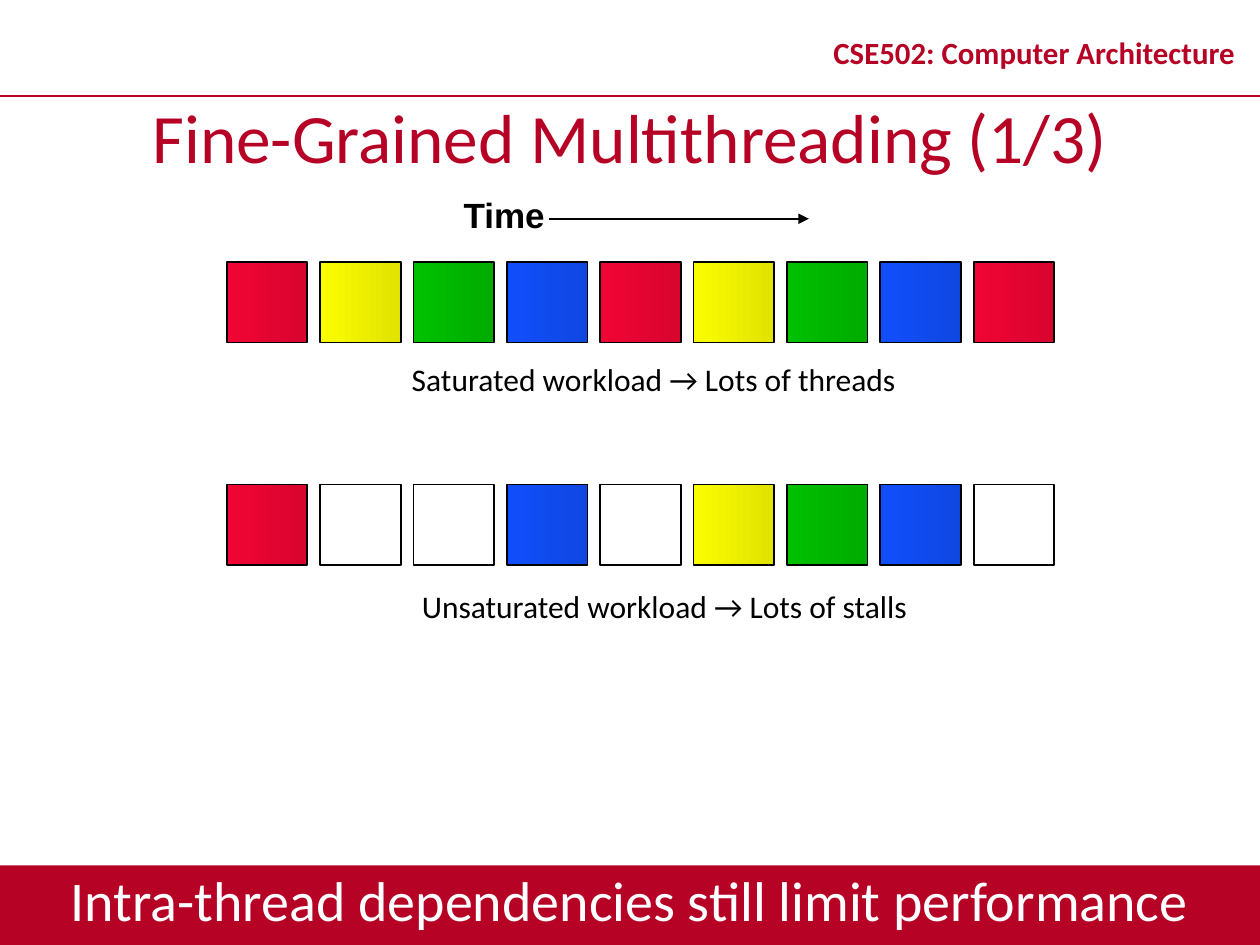
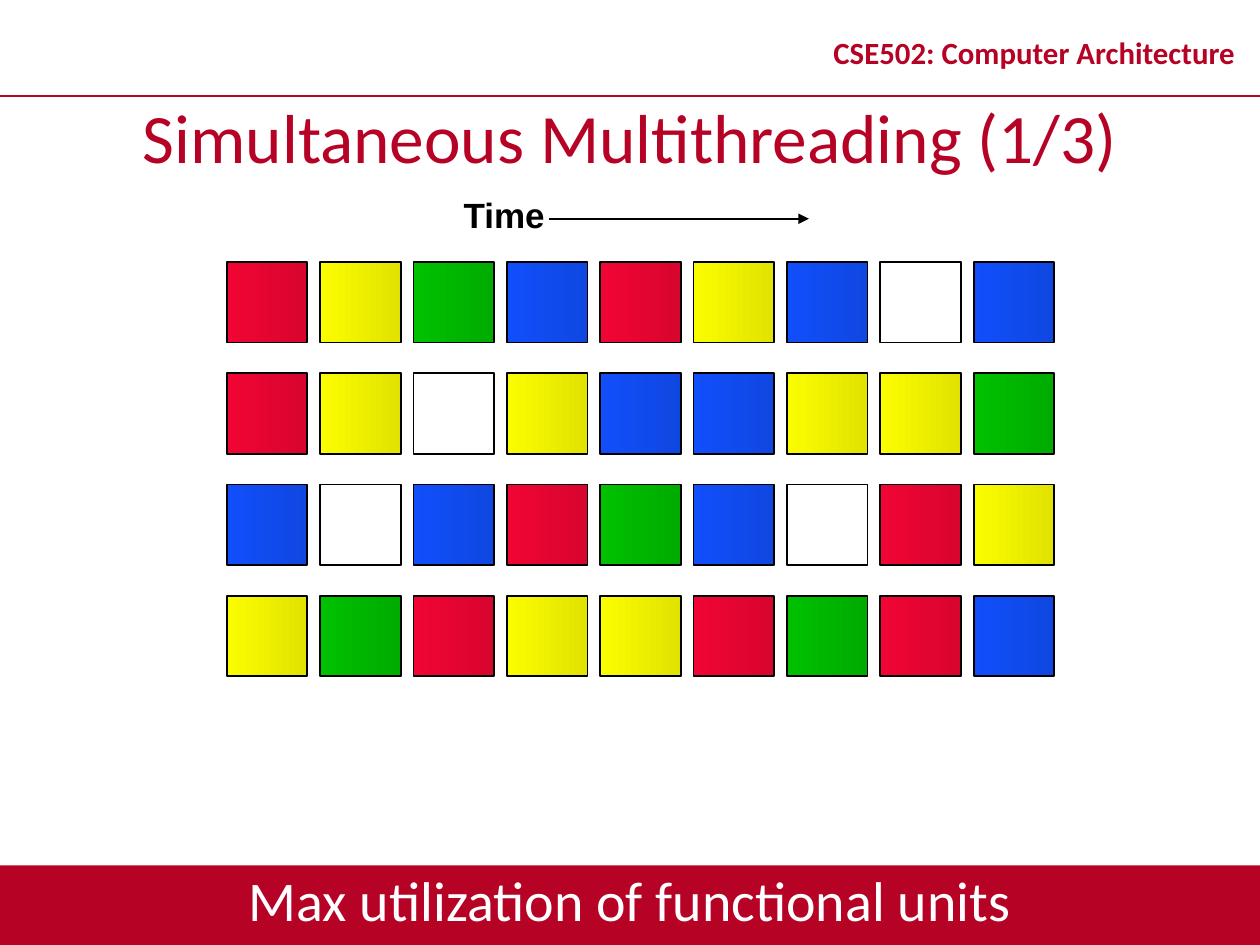
from lxml import etree
from pptx import Presentation
from pptx.dml.color import RGBColor
from pptx.enum import shapes, text
from pptx.oxml import ns
from pptx.util import Pt

CRIMSON = RGBColor(0xB6, 0x02, 0x25)
WHITE = RGBColor(0xFF, 0xFF, 0xFF)
BLACK = RGBColor(0, 0, 0)
THREADS = {
    "R": (RGBColor(0xF1, 0x05, 0x34), RGBColor(0xD8, 0x05, 0x2F)),
    "Y": (RGBColor(0xFA, 0xFD, 0x00), RGBColor(0xE1, 0xE3, 0x00)),
    "G": (RGBColor(0x00, 0xC0, 0x00), RGBColor(0x00, 0xAC, 0x00)),
    "B": (RGBColor(0x11, 0x4F, 0xFB), RGBColor(0x0F, 0x47, 0xE1)),
}
WIDTH, HEIGHT = 720, 540
RULE_TOP, BAR_HEIGHT = 54.7, 45.4
GRID_LEFT, GRID_TOP = 129.6, 149.75
CELL, COLUMN_STEP, ROW_STEP = 46.1, 53.35, 63.55
CENTER = text.PP_ALIGN.CENTER
MIDDLE = text.MSO_ANCHOR.MIDDLE


def write(shape, words, size, color, font="Calibri", bold=False, align=None):
    """Put one formatted run into a shape and return its paragraph."""
    para = shape.text_frame.paragraphs[0]
    para.alignment = align
    span = para.add_run()
    span.text = words
    span.font.name = font
    span.font.size = Pt(size)
    span.font.bold = bold
    span.font.color.rgb = color
    return para


def add_label(page, place, words, size, color=BLACK, **style):
    """Add a wrapping text box and return it."""
    box = page.shapes.add_textbox(*map(Pt, place))
    box.text_frame.word_wrap = True
    write(box, words, size, color, **style)
    return box


def add_line(page, start, end, color, arrow=False):
    """Add a straight line, with an arrowhead at its end if asked."""
    line = page.shapes.add_connector(
        shapes.MSO_CONNECTOR.STRAIGHT, *map(Pt, start + end))
    line.line.color.rgb = color
    line.line.width = Pt(1)
    if arrow:
        etree.SubElement(line.line._get_or_add_ln(), ns.qn("a:tailEnd"), type="triangle")
    etree.SubElement(line._element.spPr, ns.qn("a:effectLst"))


def add_rectangle(page, place):
    """Add a rectangle without a shadow."""
    box = page.shapes.add_shape(shapes.MSO_SHAPE.RECTANGLE, *map(Pt, place))
    box.shadow.inherit = False
    return box


def add_page(deck, title, takeaway):
    """Add a page with the shared header, title, takeaway and time axis."""
    page = deck.slides.add_slide(deck.slide_layouts[5])
    band = add_rectangle(page, (0, HEIGHT - BAR_HEIGHT, WIDTH, BAR_HEIGHT))
    band.fill.solid()
    band.fill.fore_color.rgb = CRIMSON
    band.line.fill.background()
    add_line(page, (0, RULE_TOP), (WIDTH, RULE_TOP), CRIMSON)
    course = add_label(page, (462.2, 9.3, 257.8, BAR_HEIGHT), "CSE502: Computer Architecture",
                       17.6, CRIMSON, bold=True, align=CENTER)
    course.text_frame.vertical_anchor = MIDDLE
    course.text_frame.paragraphs[0].line_spacing = 0.8

    heading = page.shapes.title
    heading.left, heading.top, heading.width, heading.height = map(
        Pt, (0, RULE_TOP, WIDTH, BAR_HEIGHT))
    heading.text_frame.auto_size = text.MSO_AUTO_SIZE.NONE
    heading.text_frame.vertical_anchor = MIDDLE
    write(heading, title, 39.6, CRIMSON, align=CENTER)

    add_label(page, (257.8, 107.3, 64, 31), "Time", 20, font="Arial", bold=True)
    add_line(page, (313.9, 125), (462.2, 125), BLACK, arrow=True)
    add_label(page, (0, 491, WIDTH, BAR_HEIGHT), takeaway, 32, WHITE, align=CENTER)
    return page


def add_cycles(page, row, cycles):
    """Draw one row of issue slots; a dash is a stall."""
    for column, thread in enumerate(cycles):
        slot = add_rectangle(page, (GRID_LEFT + column * COLUMN_STEP,
                                    GRID_TOP + row * ROW_STEP, CELL, CELL))
        slot.line.color.rgb = BLACK
        slot.line.width = Pt(1)
        if thread == "-":
            slot.fill.background()
            continue
        slot.fill.gradient()
        slot.fill.gradient_angle = 0
        for stop, color in zip(slot.fill.gradient_stops, THREADS[thread]):
            stop.color.rgb = color


def main():
    """Build both pages and save the deck."""
    deck = Presentation()
    deck.slide_width, deck.slide_height = Pt(WIDTH), Pt(HEIGHT)

    fine = add_page(deck, "Fine-Grained Multithreading (1/3)",
                    "Intra-thread dependencies still limit performance")
    add_cycles(fine, 0, "RYGBRYGBR")
    add_cycles(fine, 2, "R--B-YGB-")
    add_label(fine, (228.2, 202.3, 300, 29), "Saturated workload → Lots of threads", 18)
    add_label(fine, (234, 331.9, 312, 29), "Unsaturated workload → Lots of stalls", 18)

    simultaneous = add_page(deck, "Simultaneous Multithreading (1/3)",
                            "Max utilization of functional units")
    for row, cycles in enumerate(("RYGBRYB-B", "RY-YBBYYG", "B-BRGB-RY", "YGRYYRGRB")):
        add_cycles(simultaneous, row, cycles)

    deck.save("out.pptx")


if __name__ == "__main__":
    main()
